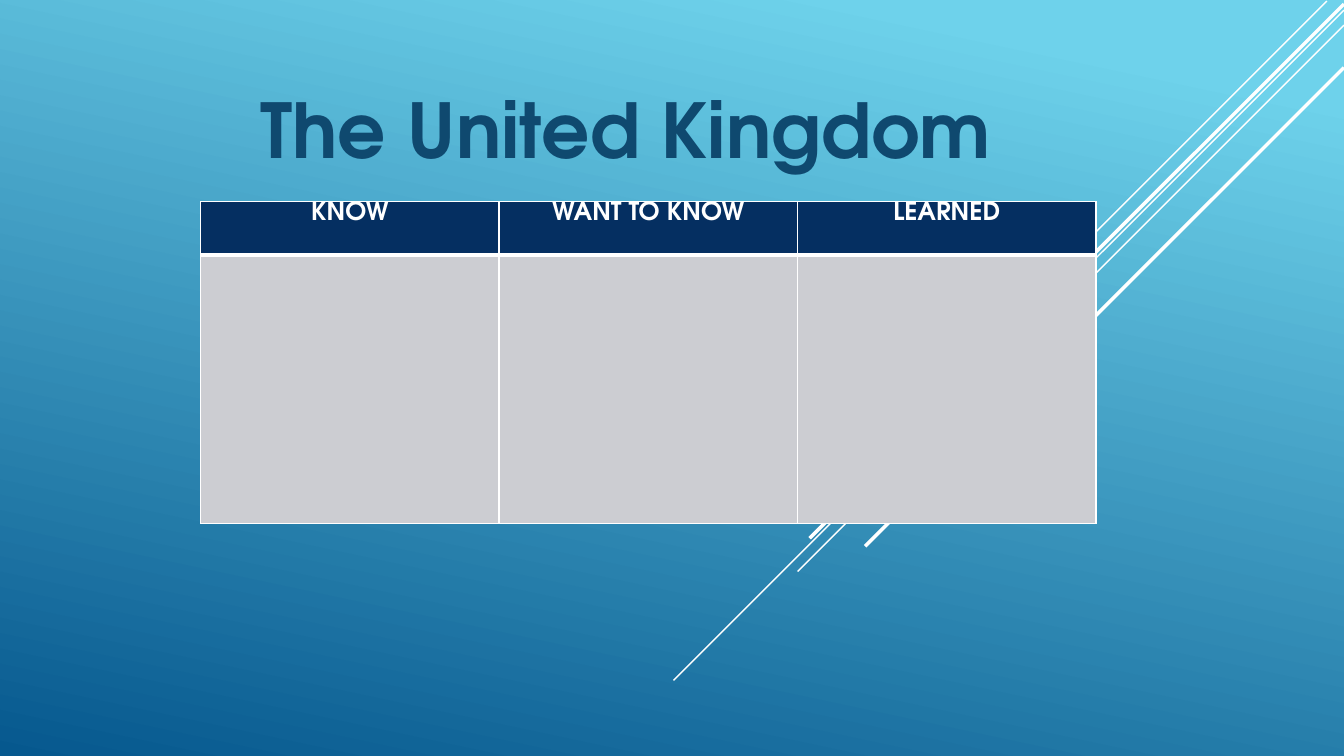
import pptx
import pptx.util
import pptx.dml.color
import pptx.enum.shapes
import pptx.enum.text
import pptx.oxml
import pptx.oxml.ns

Inches = pptx.util.Inches
Pt = pptx.util.Pt
RGBColor = pptx.dml.color.RGBColor
CENTER = pptx.enum.text.PP_ALIGN.CENTER

TITLE = "The United Kingdom"
HEADS = ["KNOW", "WANT TO KNOW", "LEARNED"]
ROWS = [0.53, 2.66]
COL = 2.96
FONT = "TeX Gyre Adventor"
WHITE = RGBColor(0xFF, 0xFF, 0xFF)
NAVY = RGBColor(0x05, 0x2F, 0x61)
GREY = RGBColor(0xCC, 0xCD, 0xD2)
BLUE = RGBColor(0x0F, 0x49, 0x6F)
SKY = RGBColor(0x6E, 0xD2, 0xEB)
DEEP = RGBColor(0x06, 0x58, 0x8E)
STOPS = [(0.1, SKY), (1, DEEP)]
RAYS = [
    (13.16, 0.01, 4.17, 1),
    (13.33, 0.10, 6.65, 1),
    (13.33, 0.25, 5.42, 1),
    (13.33, 0.04, 5.30, 2.5),
    (13.33, 0.67, 4.75, 2.5),
]


def style(para, size, color):
    para.alignment = CENTER
    for run in para.runs:
        run.font.name = FONT
        run.font.size = Pt(size)
        run.font.bold = True
        run.font.color.rgb = color


def border(cell, low):
    props = cell._tc.get_or_add_tcPr()
    sides = [("lnL", 1), ("lnR", 1), ("lnT", 1), ("lnB", low)]
    for spot, (side, width) in enumerate(sides):
        props.insert(spot, pptx.oxml.parse_xml(
            f'<a:{side} {pptx.oxml.ns.nsdecls("a")} w="{Pt(width)}">'
            f'<a:solidFill><a:srgbClr val="{WHITE}"/></a:solidFill></a:{side}>'))


def main():
    deck = pptx.Presentation()
    deck.slide_width = Inches(13.33)
    deck.slide_height = Inches(7.5)
    slide = deck.slides.add_slide(deck.slide_layouts[6])

    back = slide.background.fill
    back.gradient()
    back.gradient_angle = 360 - 102
    for stop, (place, color) in zip(back.gradient_stops, STOPS):
        stop.position = place
        stop.color.rgb = color

    for x, y, run, width in RAYS:
        ray = slide.shapes.add_connector(
            pptx.enum.shapes.MSO_CONNECTOR.STRAIGHT,
            Inches(x), Inches(y), Inches(x - run), Inches(y + run))
        ray.line.color.rgb = WHITE
        ray.line.width = Pt(width)
        ray._element.spPr.append(
            pptx.oxml.parse_xml(f'<a:effectLst {pptx.oxml.ns.nsdecls("a")}/>'))

    table = slide.shapes.add_table(
        len(ROWS), len(HEADS), Inches(1.99), Inches(2),
        Inches(COL * len(HEADS)), Inches(sum(ROWS))).table
    for row, height in zip(table.rows, ROWS):
        row.height = Inches(height)
    for col, head in enumerate(HEADS):
        table.columns[col].width = Inches(COL)
        top, body = table.cell(0, col), table.cell(1, col)
        top.text_frame.text = head
        top.margin_top = top.margin_bottom = 0
        style(top.text_frame.paragraphs[0], 18, WHITE)
        for cell, color, low in [(top, NAVY, 3), (body, GREY, 1)]:
            cell.fill.solid()
            cell.fill.fore_color.rgb = color
            border(cell, low)

    frame = slide.shapes.add_textbox(
        Inches(1.86), Inches(0.77), Inches(8.69), Inches(2.02)).text_frame
    frame.word_wrap = True
    frame.text = TITLE
    style(frame.paragraphs[0], 54, BLUE)

    deck.save("out.pptx")


if __name__ == "__main__":
    main()
